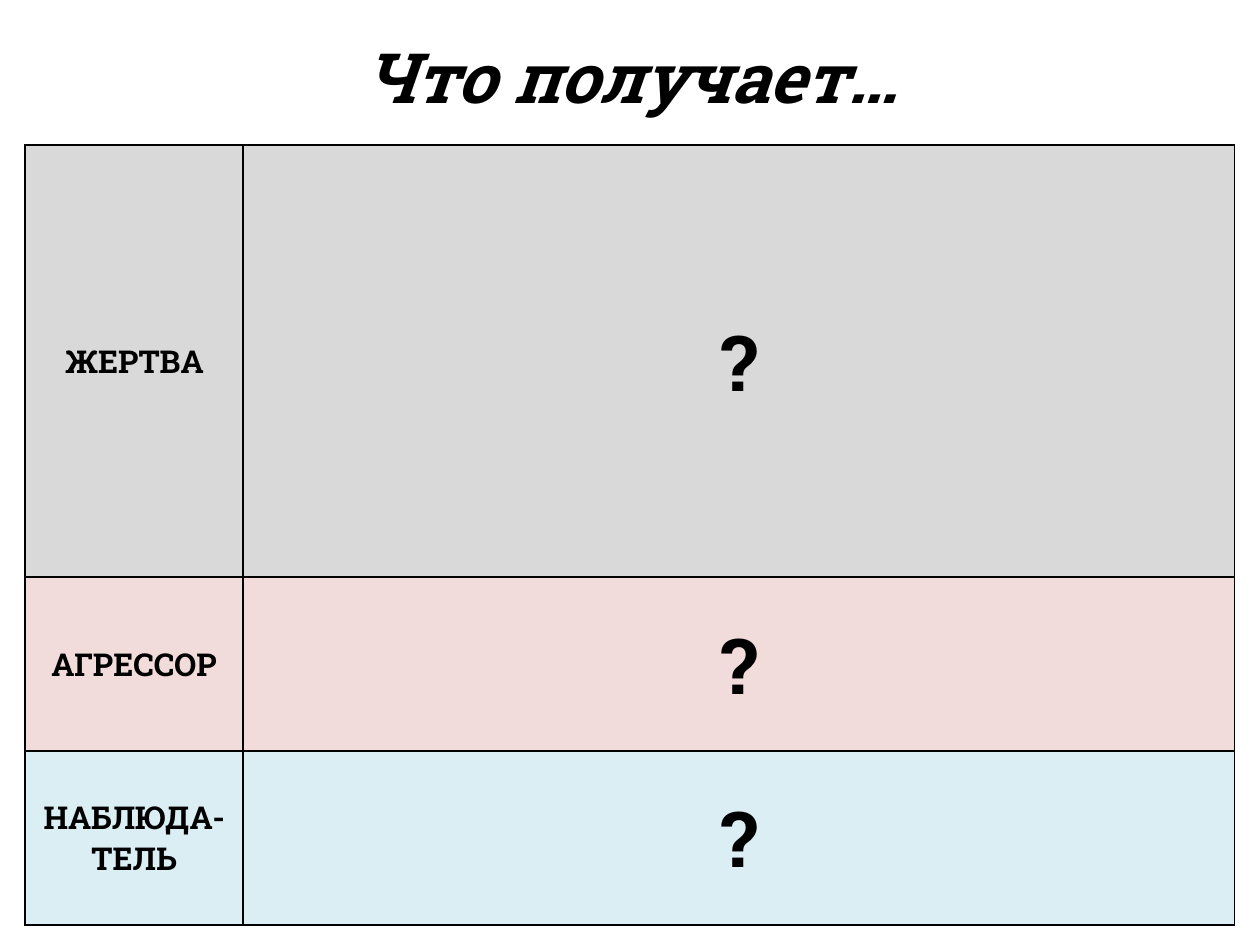
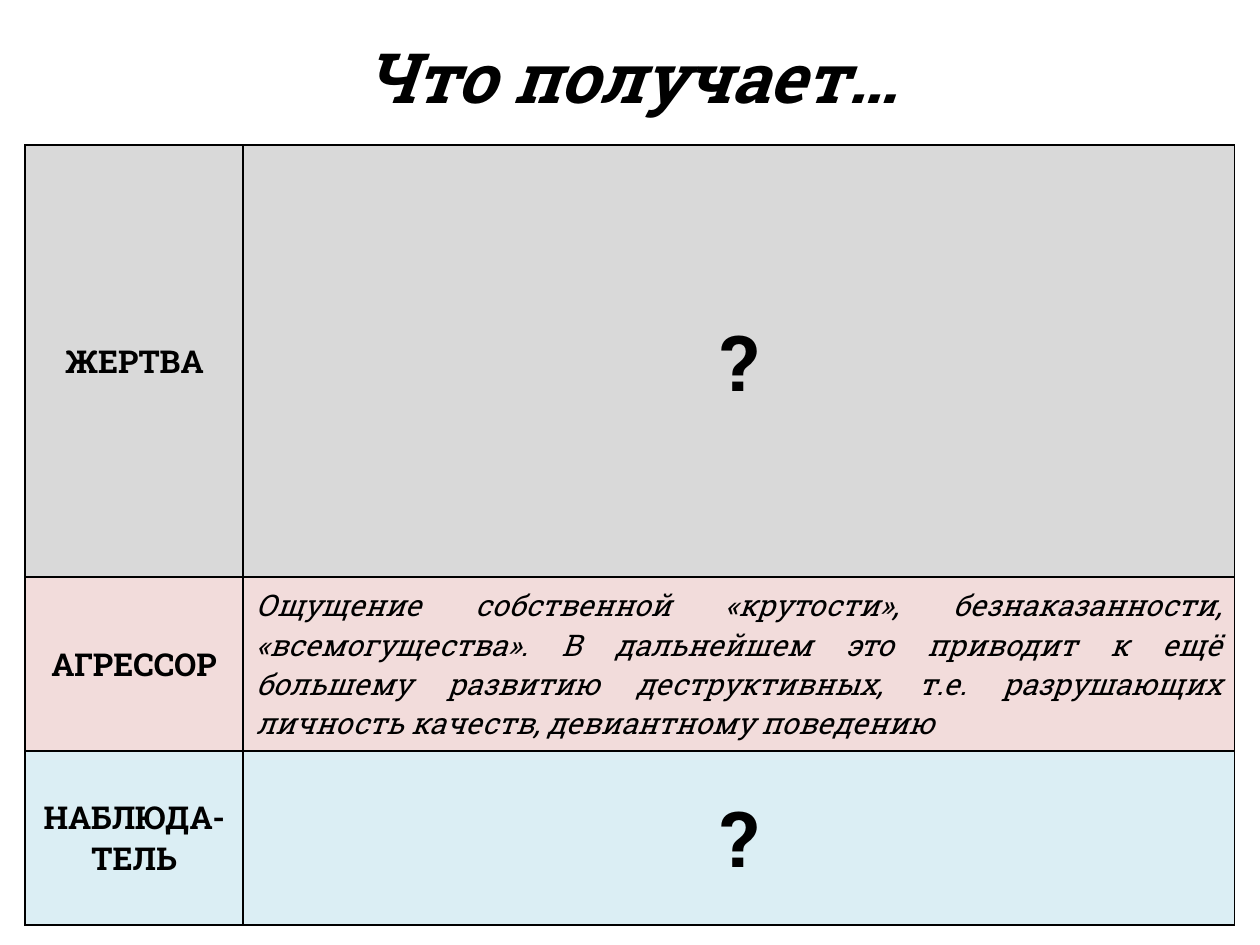
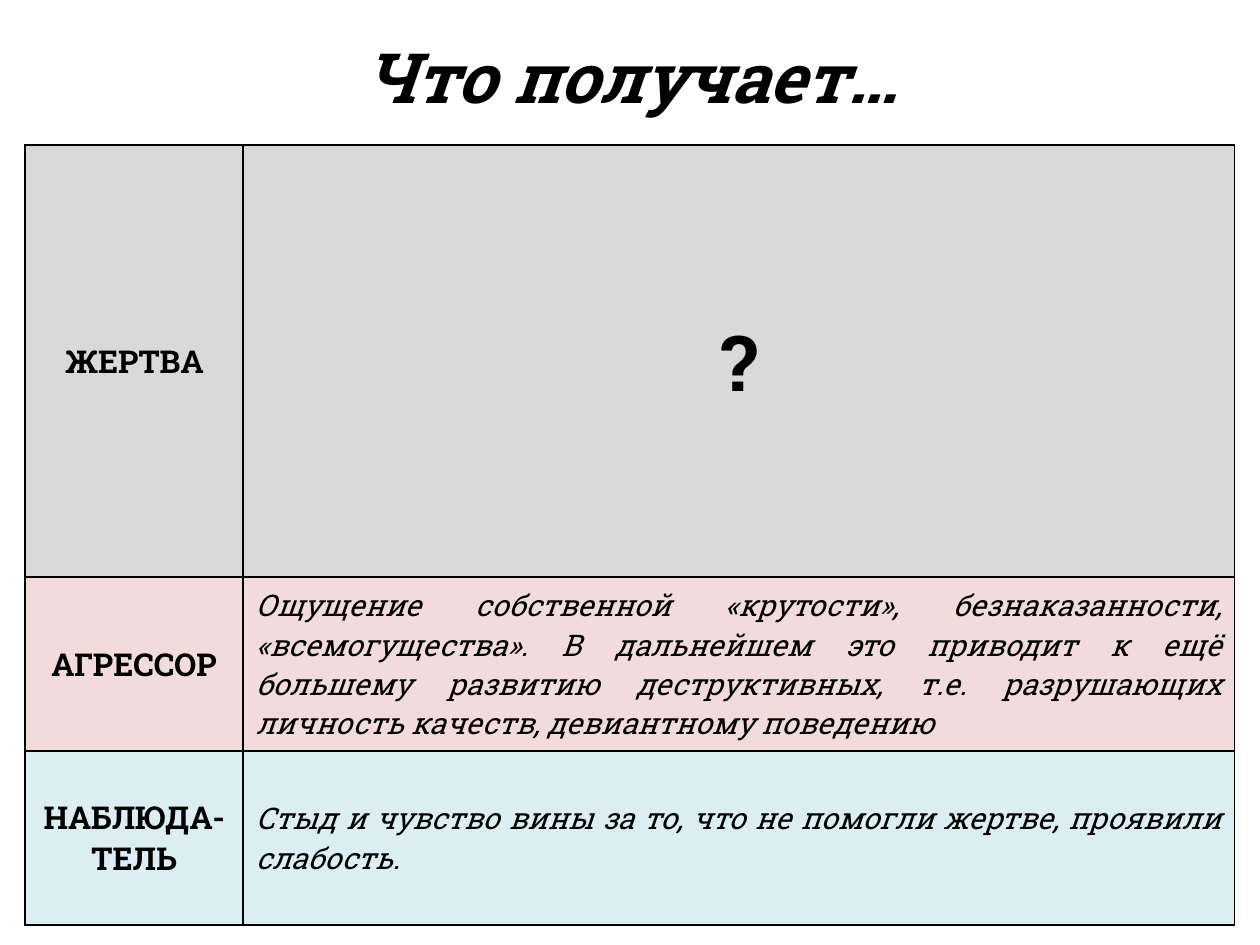
"""Build three slides that reveal, row by row, what each side of bullying receives."""
from dataclasses import dataclass

from lxml import etree
from pptx import Presentation
from pptx import util as u
from pptx.dml.color import RGBColor
from pptx.enum import text
from pptx.oxml.ns import qn


@dataclass(frozen=True)
class Theme:
    font: str = "Roboto Slab"
    ink: str = "000000"
    row_fills: tuple = ("D9D9D9", "F2DCDB", "DBEEF4")
    title_size: float = 39.6
    role_size: float = 18
    question_size: float = 44
    answer_size: float = 17
    border_width: float = 1


THEME = Theme()
TITLE = "Что получает…"
ROLES = ("ЖЕРТВА", "АГРЕССОР", "НАБЛЮДА-ТЕЛЬ")
AGGRESSOR_ANSWER = (
    "Ощущение собственной «крутости», безнаказанности, «всемогущества». "
    "В дальнейшем это приводит к ещё большему развитию деструктивных, "
    "т.е. разрушающих личность качеств, девиантному поведению"
)
OBSERVER_ANSWER = "Стыд и чувство вины за то, что не помогли жертве, проявили слабость."
REVEALS = (
    (None, None, None),
    (None, AGGRESSOR_ANSWER, None),
    (None, AGGRESSOR_ANSWER, OBSERVER_ANSWER),
)
COLUMN_WIDTHS = (1.73, 7.87)
ROW_HEIGHTS = (3.43, 1.38, 1.38)


def write(frame, words, size, bold=True, italic=False, align=text.PP_ALIGN.CENTER):
    """Put one styled run into the first paragraph of a text frame."""
    para = frame.paragraphs[0]
    para.alignment = align
    span = para.add_run()
    span.text = words
    span.font.name = THEME.font
    span.font.size = u.Pt(size)
    span.font.bold = bold
    span.font.italic = italic
    span.font.color.rgb = RGBColor.from_string(THEME.ink)


def style_cell(cell, fill):
    """Give a table cell its borders, fill and vertical anchor."""
    cell.vertical_anchor = text.MSO_ANCHOR.MIDDLE
    properties = cell._tc.get_or_add_tcPr()
    for side in ("a:lnL", "a:lnR", "a:lnT", "a:lnB"):
        line = etree.SubElement(properties, qn(side), w=str(u.Pt(THEME.border_width)))
        solid = etree.SubElement(line, qn("a:solidFill"))
        etree.SubElement(solid, qn("a:srgbClr"), val=THEME.ink)
    cell.fill.solid()
    cell.fill.fore_color.rgb = RGBColor.from_string(fill)


deck = Presentation()
deck.slide_width, deck.slide_height = u.Inches(10), u.Inches(7.5)
title_only = deck.slide_layouts.get_by_name("Title Only")

for answers in REVEALS:
    page = deck.slides.add_slide(title_only)
    title = page.shapes.title
    title.left, title.top = u.Inches(0.5), u.Inches(0.3)
    title.width, title.height = u.Inches(9), u.Inches(0.61)
    title.text_frame.auto_size = text.MSO_AUTO_SIZE.NONE
    title.text_frame.vertical_anchor = text.MSO_ANCHOR.MIDDLE
    write(title.text_frame, TITLE, THEME.title_size, italic=True)

    table = page.shapes.add_table(
        len(ROLES), len(COLUMN_WIDTHS), u.Inches(0.2), u.Inches(1.15),
        u.Inches(sum(COLUMN_WIDTHS)), u.Inches(sum(ROW_HEIGHTS)),
    ).table
    table.first_row = table.horz_banding = False
    for column, width in zip(table.columns, COLUMN_WIDTHS):
        column.width = u.Inches(width)

    for row, height, role, answer, fill in zip(
        table.rows, ROW_HEIGHTS, ROLES, answers, THEME.row_fills
    ):
        row.height = u.Inches(height)
        role_cell, answer_cell = row.cells
        style_cell(role_cell, fill)
        style_cell(answer_cell, fill)
        write(role_cell.text_frame, role, THEME.role_size)
        if answer:
            write(answer_cell.text_frame, answer, THEME.answer_size, bold=False,
                  italic=True, align=text.PP_ALIGN.JUSTIFY)
        else:
            write(answer_cell.text_frame, "?", THEME.question_size)

deck.save("out.pptx")
